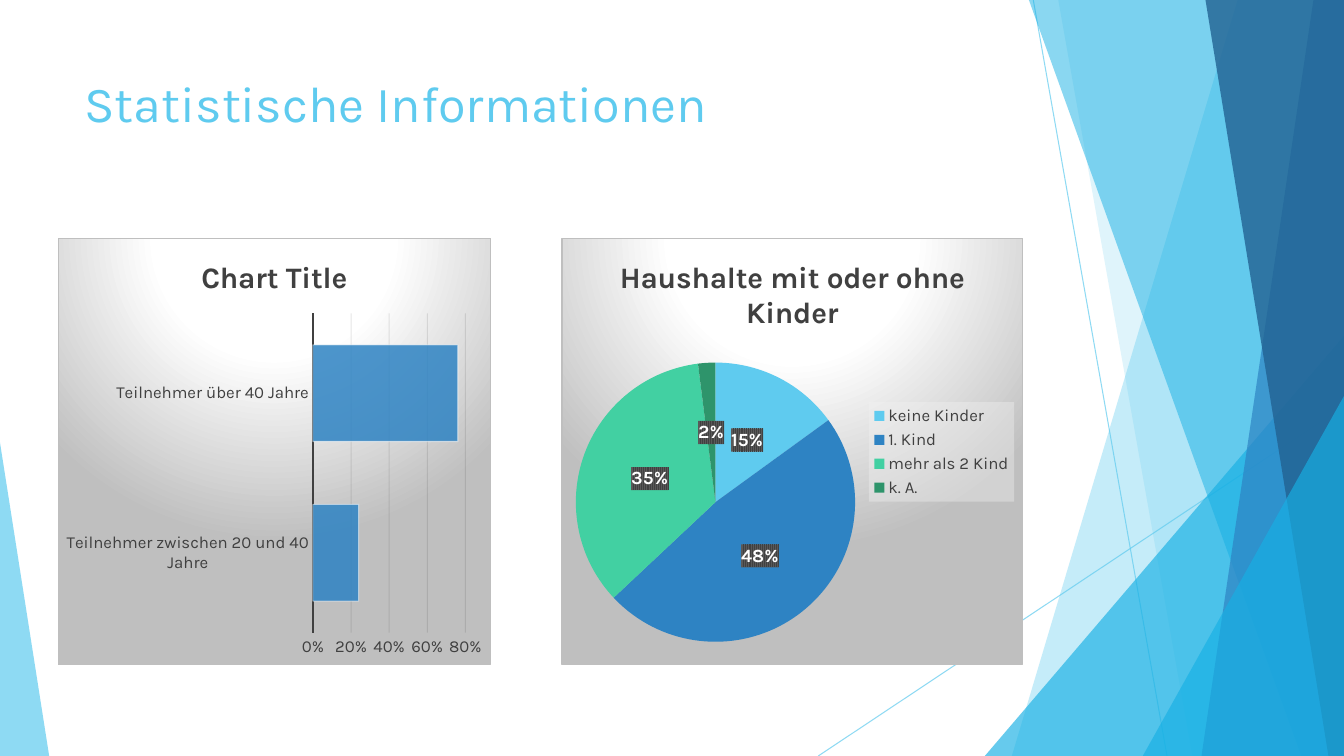
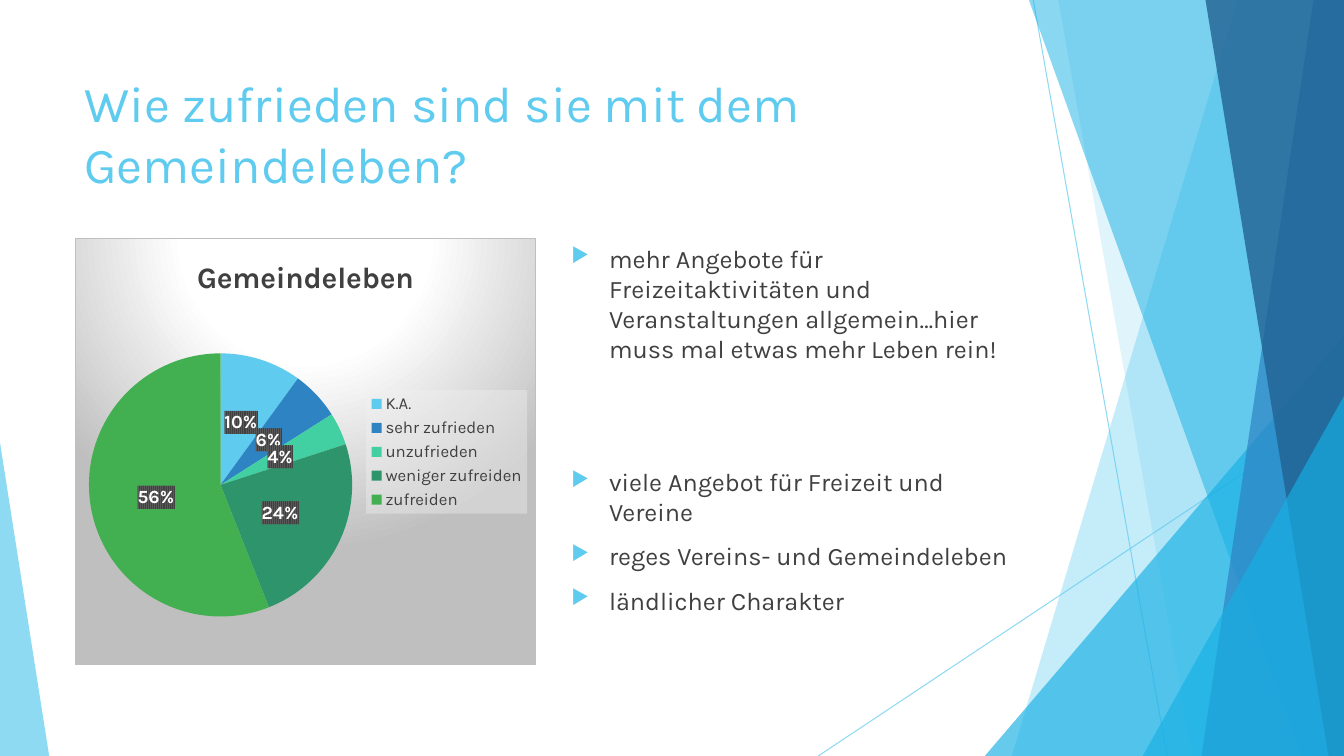
from pptx import Presentation
from pptx.chart.data import CategoryChartData as Data
from pptx.dml.color import RGBColor as RGB
from pptx.enum.chart import XL_CHART_TYPE as Kind
from pptx.enum.chart import XL_LABEL_POSITION as Spot
from pptx.enum.chart import XL_LEGEND_POSITION as Side
from pptx.enum.chart import XL_TICK_MARK as Tick
from pptx.enum.shapes import MSO_CONNECTOR as Conn
from pptx.enum.shapes import MSO_SHAPE as Form
from pptx.oxml import parse_xml
from pptx.oxml.ns import nsdecls, qn
from pptx.util import Cm, Pt

# Style
FONT = "Karla"
SKY = RGB(0x5F, 0xCB, 0xEF)
CYAN = RGB(0x17, 0xB0, 0xE4)
BLUE = RGB(0x2E, 0x83, 0xC3)
NAVY = RGB(0x22, 0x62, 0x92)
MINT = RGB(0x42, 0xD0, 0xA2)
PINE = RGB(0x2E, 0x94, 0x6B)
GREEN = RGB(0x42, 0xB0, 0x51)
DARK = RGB(0x40, 0x40, 0x40)
INK = RGB(0x0D, 0x0D, 0x0D)
WHITE = RGB(0xFF, 0xFF, 0xFF)
SLICES = (SKY, BLUE, MINT, PINE, GREEN)

# Page and content grid, in cm
WIDE, HIGH = 33.87, 19.05
LEFT, MID, TOP = 1.88, 14.15, 6
BOX_W, BOX_H = 11.63, 10.77

# Backdrop: lines as end points, bands as top x and bottom x,
# triangles as left, top, width and apex
LINES = ((26.04, 0, 29.41, HIGH), (WIDE, 10.24, 20.62, HIGH))
BACK = (
    ("band", (31.19, 25.5), SKY, 36),
    ("band", (26.67, 30.05), SKY, 20),
    ("wedge", (24.82, 8.46, 9.05, 1), CYAN, 66),
    ("band", (25.93, 32.79), CYAN, 50),
    ("band", (33.1, 30.28), BLUE, 70),
    ("band", (30.38, 33.48), NAVY, 80),
    ("wedge", (28.8, 9.98, 5.07, 1), CYAN, 66),
    ("wedge", (0, 11.15, 1.24, 0), SKY, 70),
)

PANEL = """
<a:gradFill><a:gsLst>
 <a:gs pos="0"><a:srgbClr val="FFFFFF"/></a:gs>
 <a:gs pos="39000"><a:srgbClr val="FFFFFF"/></a:gs>
 <a:gs pos="100000"><a:srgbClr val="BFBFBF"/></a:gs>
</a:gsLst><a:path path="circle">
 <a:fillToRect l="50000" t="-80000" r="50000" b="180000"/>
</a:path></a:gradFill>
<a:ln w="9525"><a:solidFill><a:srgbClr val="BFBFBF"/></a:solidFill></a:ln>"""
TAG = """
<a:pattFill prst="narVert"><a:fgClr><a:srgbClr val="404040"/></a:fgClr>
<a:bgClr><a:srgbClr val="595959"/></a:bgClr></a:pattFill>"""
PALE = """
<a:solidFill><a:srgbClr val="F2F2F2"><a:alpha val="39000"/></a:srgbClr>
</a:solidFill>"""
BULLET = (
    f'<a:buClr {nsdecls("a")}><a:srgbClr val="{SKY}"/></a:buClr>',
    f'<a:buSzPct {nsdecls("a")} val="80000"/>',
    f'<a:buChar {nsdecls("a")} char="▶"/>',
)


def fade(node, pct):
    """Make every colour below the node partly transparent."""
    for tone in node.iter(qn("a:srgbClr")):
        tone.append(parse_xml(f'<a:alpha {nsdecls("a")} val="{pct * 1000}"/>'))


def skin(node, body):
    """Put chart shape properties right after the node."""
    node.addnext(parse_xml(f'<c:spPr {nsdecls("c", "a")}>{body}</c:spPr>'))


def style(font, size, tone, bold=False):
    font.name, font.size, font.bold = FONT, Pt(size), bold
    font.color.rgb = tone


class Deck:
    def __init__(self):
        self.prs = Presentation()
        self.prs.slide_width = Cm(WIDE)
        self.prs.slide_height = Cm(HIGH)
        self.shapes = None

    def page(self, title):
        layout = self.prs.slide_layouts[6]
        self.shapes = self.prs.slides.add_slide(layout).shapes
        for ends in LINES:
            self.line(*ends)
        for kind, args, tone, pct in BACK:
            part = getattr(self, kind)(*args)
            part.shadow.inherit = False
            part.fill.solid()
            part.fill.fore_color.rgb = tone
            part.line.fill.background()
            fade(part.element.spPr, pct)
        para = self.frame(LEFT, 1.7, 23.88, 3.66).paragraphs[0]
        para.text = title
        style(para.font, 36, SKY)

    # Backdrop parts
    def line(self, *ends):
        line = self.shapes.add_connector(Conn.STRAIGHT, *map(Cm, ends))
        line.line.color.rgb = SKY
        line.line.width = Pt(0.75)
        prop = line.element.spPr
        fade(prop, 70)
        prop.append(parse_xml(f'<a:effectLst {nsdecls("a")}/>'))

    def band(self, head, foot):
        pen = self.shapes.build_freeform(Cm(head), 0)
        rest = ((WIDE, 0), (WIDE, HIGH), (foot, HIGH))
        pen.add_line_segments([(Cm(x), Cm(y)) for x, y in rest])
        return pen.convert_to_shape()

    def wedge(self, x, y, w, apex):
        part = self.shapes.add_shape(
            Form.ISOSCELES_TRIANGLE, Cm(x), Cm(y), Cm(w), Cm(HIGH - y))
        part.adjustments[0] = apex
        return part

    # Text
    def frame(self, *box):
        frame = self.shapes.add_textbox(*map(Cm, box)).text_frame
        frame.word_wrap = True
        return frame

    def points(self, x, items):
        frame = self.frame(x, TOP, BOX_W, BOX_H)
        for num, (text, gap) in enumerate(items):
            para = frame.add_paragraph() if num else frame.paragraphs[0]
            para.text = text
            para.space_before = Pt(gap)
            prop = para._p.get_or_add_pPr()
            prop.set("marL", str(Cm(0.95)))
            prop.set("indent", str(Cm(-0.95)))
            for mark in BULLET:
                prop.append(parse_xml(mark))
            style(para.font, 18, DARK)

    # Charts
    def chart(self, kind, x, w, title, rows):
        data = Data()
        data.categories = [name for name, _ in rows]
        data.add_series("Series 1", [val for _, val in rows])
        box = map(Cm, (x, TOP, w, BOX_H))
        chart = self.shapes.add_chart(kind, *box, data).chart
        chart.font.name, chart.font.size = FONT, Pt(10)
        chart.has_title = True
        head = chart.chart_title
        head.include_in_layout = False
        para = head.text_frame.paragraphs[0]
        para.text = title
        style(para.font, 21.3, DARK, True)
        skin(chart.element.find(qn("c:chart")), PANEL)
        return chart

    def labels(self, series, size, spot):
        tags = series.data_labels
        tags.number_format, tags.number_format_is_linked = "0%", False
        tags.position = spot
        style(tags.font, size, WHITE, True)
        return tags

    def pie(self, x, title, rows):
        chart = self.chart(Kind.PIE, x, BOX_W, title, rows)
        plot = chart.plots[0]
        plot.vary_by_categories = True
        series = plot.series[0]
        for num, tone in enumerate(SLICES[:len(rows)]):
            fill = series.points[num].format.fill
            fill.solid()
            fill.fore_color.rgb = tone
        tags = self.labels(series, 13.3, Spot.CENTER)
        tags.show_value, tags.show_percentage = False, True
        root = chart.element
        skin(root.find(".//" + qn("c:dLbls") + "/" + qn("c:numFmt")), TAG)
        # Legend
        chart.has_legend = True
        chart.legend.position = Side.RIGHT
        chart.legend.include_in_layout = False
        style(chart.legend.font, 12, DARK)
        skin(root.find(".//" + qn("c:legend") + "/" + qn("c:overlay")), PALE)

    def bars(self, x, w, title, rows):
        chart = self.chart(Kind.BAR_CLUSTERED, x, w, title, rows)
        chart.has_legend = False
        plot = chart.plots[0]
        plot.gap_width, plot.vary_by_categories = 65, False
        series = plot.series[0]
        look = series.format
        look.fill.solid()
        look.fill.fore_color.rgb = BLUE
        look.line.color.rgb = WHITE
        look.line.width = Pt(0.75)
        self.labels(series, 12, Spot.INSIDE_END)
        prop = chart.element.find(".//" + qn("c:ser") + "/" + qn("c:spPr"))
        fade(prop.find(qn("a:solidFill")), 85)
        fade(prop.find(qn("a:ln")), 50)
        # Axes
        cat, val = chart.category_axis, chart.value_axis
        for axis in (cat, val):
            axis.major_tick_mark = axis.minor_tick_mark = Tick.NONE
            style(axis.tick_labels.font, 12, DARK)
        cat.format.line.color.rgb = DARK
        cat.format.line.width = Pt(1.5)
        val.format.line.fill.background()
        val.minimum_scale, val.maximum_scale, val.major_unit = 0, 0.8, 0.2
        val.tick_labels.number_format = "0%"
        val.tick_labels.number_format_is_linked = False
        grid = val.major_gridlines.format.line
        grid.color.rgb = INK
        grid.width = Pt(0.75)
        fade(chart.element.find(".//" + qn("c:majorGridlines")), 10)


def main():
    deck = Deck()

    # Statistics
    deck.page("Statistische Informationen")
    deck.pie(MID, "Haushalte mit oder ohne Kinder", (
        ("keine Kinder", 15),
        ("1. Kind", 48),
        ("mehr als 2 Kind", 35),
        ("k. A.", 2),
    ))
    deck.bars(1.45, 10.92, "Chart Title", (
        ("Teilnehmer zwischen 20 und 40 Jahre", 0.24),
        ("Teilnehmer über 40 Jahre", 0.76),
    ))

    # Community life
    deck.page("Wie zufrieden sind sie mit dem Gemeindeleben?")
    deck.points(MID, (
        ("mehr Angebote für Freizeitaktivitäten und Veranstaltungen "
         "allgemein…hier muss mal etwas mehr Leben rein!", 10),
        ("viele Angebot für Freizeit und Vereine", 73),
        ("reges Vereins- und Gemeindeleben", 10),
        ("ländlicher Charakter", 10),
    ))
    deck.pie(LEFT, "Gemeindeleben", (
        ("K.A.", 10),
        ("sehr zufrieden", 6),
        ("unzufrieden", 4),
        ("weniger zufreiden", 24),
        ("zufreiden", 56),
    ))

    deck.prs.save("out.pptx")


if __name__ == "__main__":
    main()
